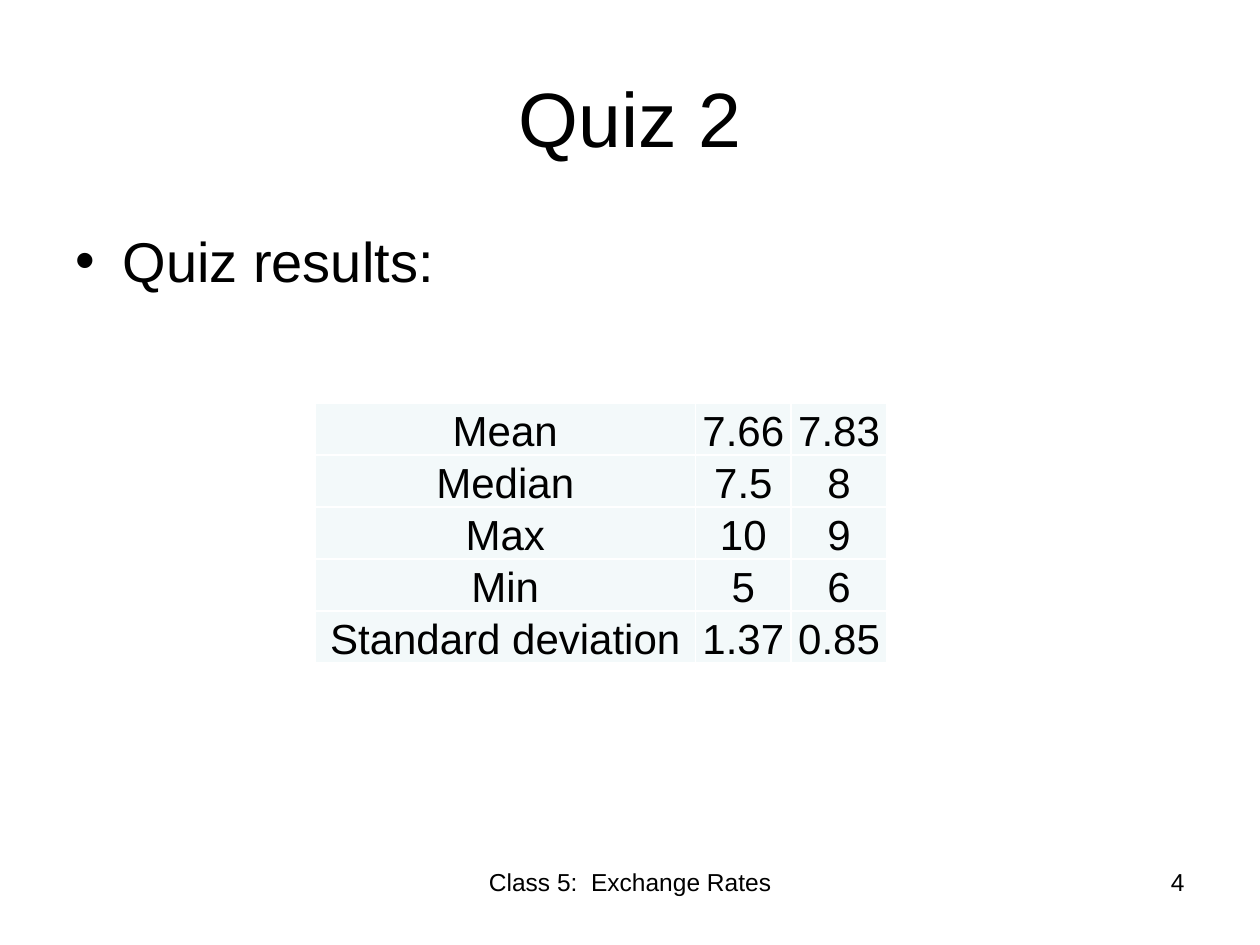
from dataclasses import dataclass

from lxml.etree import SubElement
from pptx import Presentation
from pptx.dml.color import RGBColor
from pptx.enum.text import MSO_ANCHOR, PP_ALIGN
from pptx.oxml.ns import qn
from pptx.slide import Slide
from pptx.table import _Cell
from pptx.text.text import _Paragraph
from pptx.util import Cm, Pt

FONT = "Arial"
BLACK = "000000"
WHITE = "FFFFFF"
CELL_FILL = "F3F9FA"


@dataclass
class TextItem:
    text: str
    left: float
    top: float
    width: float
    height: float
    size: float
    align: PP_ALIGN
    anchor: MSO_ANCHOR = MSO_ANCHOR.TOP
    bullet: bool = False


TEXT_ITEMS = [
    TextItem("Quiz 2", 1.27, 0.76, 22.86, 3.18, 44, PP_ALIGN.CENTER, MSO_ANCHOR.MIDDLE),
    TextItem("Quiz results:", 1.27, 4.45, 22.86, 12.57, 32, PP_ALIGN.LEFT, bullet=True),
    TextItem("Class 5:  Exchange Rates", 8.68, 17.35, 8.05, 1.32, 14, PP_ALIGN.CENTER),
    TextItem("4", 18.21, 17.35, 5.92, 1.32, 14, PP_ALIGN.RIGHT),
]

QUIZ_RESULTS = [
    ("Mean", "7.66", "7.83"),
    ("Median", "7.5", "8"),
    ("Max", "10", "9"),
    ("Min", "5", "6"),
    ("Standard deviation", "1.37", "0.85"),
]
COLUMN_WIDTHS = (7.67, 1.93, 1.93)
ROW_HEIGHT = 0.97


def colour(value: str) -> RGBColor:
    return RGBColor.from_string(value)


def format_paragraph(para: _Paragraph, size: float, align: PP_ALIGN) -> None:
    para.alignment = align
    for span in para.runs:
        span.font.name = FONT
        span.font.size = Pt(size)
        span.font.color.rgb = colour(BLACK)


def add_bullet(para: _Paragraph) -> None:
    """Give a hanging bullet and space before of 20 percent."""
    properties = para._p.get_or_add_pPr()
    properties.set("marL", str(Cm(0.95)))
    properties.set("indent", str(Cm(-0.95)))
    spacing = SubElement(properties, qn("a:spcBef"))
    SubElement(spacing, qn("a:spcPct"), val="20000")
    SubElement(properties, qn("a:buFont"), typeface=FONT)
    SubElement(properties, qn("a:buChar"), char="•")


def add_text(slide: Slide, item: TextItem) -> None:
    box = slide.shapes.add_textbox(
        Cm(item.left), Cm(item.top), Cm(item.width), Cm(item.height)
    )
    frame = box.text_frame
    frame.word_wrap = True
    frame.vertical_anchor = item.anchor
    frame.text = item.text
    para = frame.paragraphs[0]
    format_paragraph(para, item.size, item.align)
    if item.bullet:
        add_bullet(para)


def add_borders(cell: _Cell) -> None:
    properties = cell._tc.get_or_add_tcPr()
    for side in ("lnL", "lnR", "lnT", "lnB"):
        line = SubElement(properties, qn(f"a:{side}"), w=str(Pt(1)))
        fill = SubElement(line, qn("a:solidFill"))
        SubElement(fill, qn("a:srgbClr"), val=WHITE)


def fill_cell(cell: _Cell, text: str) -> None:
    cell.margin_left = cell.margin_right = cell.margin_top = Cm(0.03)
    cell.margin_bottom = 0
    cell.vertical_anchor = MSO_ANCHOR.BOTTOM
    add_borders(cell)
    cell.fill.solid()
    cell.fill.fore_color.rgb = colour(CELL_FILL)
    cell.text_frame.text = text
    format_paragraph(cell.text_frame.paragraphs[0], 24, PP_ALIGN.CENTER)


def add_results_table(slide: Slide) -> None:
    table = slide.shapes.add_table(
        len(QUIZ_RESULTS), len(COLUMN_WIDTHS), Cm(6.35), Cm(8.13),
        Cm(sum(COLUMN_WIDTHS)), Cm(ROW_HEIGHT * len(QUIZ_RESULTS)),
    ).table
    table.first_row = False
    table.horz_banding = False
    for column, width in zip(table.columns, COLUMN_WIDTHS):
        column.width = Cm(width)
    for row, values in zip(table.rows, QUIZ_RESULTS):
        row.height = Cm(ROW_HEIGHT)
        for cell, value in zip(row.cells, values):
            fill_cell(cell, value)


def main() -> None:
    deck = Presentation()
    deck.slide_width = Cm(25.4)
    deck.slide_height = Cm(19.05)
    slide = deck.slides.add_slide(deck.slide_layouts[6])
    slide.background.fill.solid()
    slide.background.fill.fore_color.rgb = colour(WHITE)
    for item in TEXT_ITEMS:
        add_text(slide, item)
    add_results_table(slide)
    deck.save("out.pptx")


if __name__ == "__main__":
    main()
